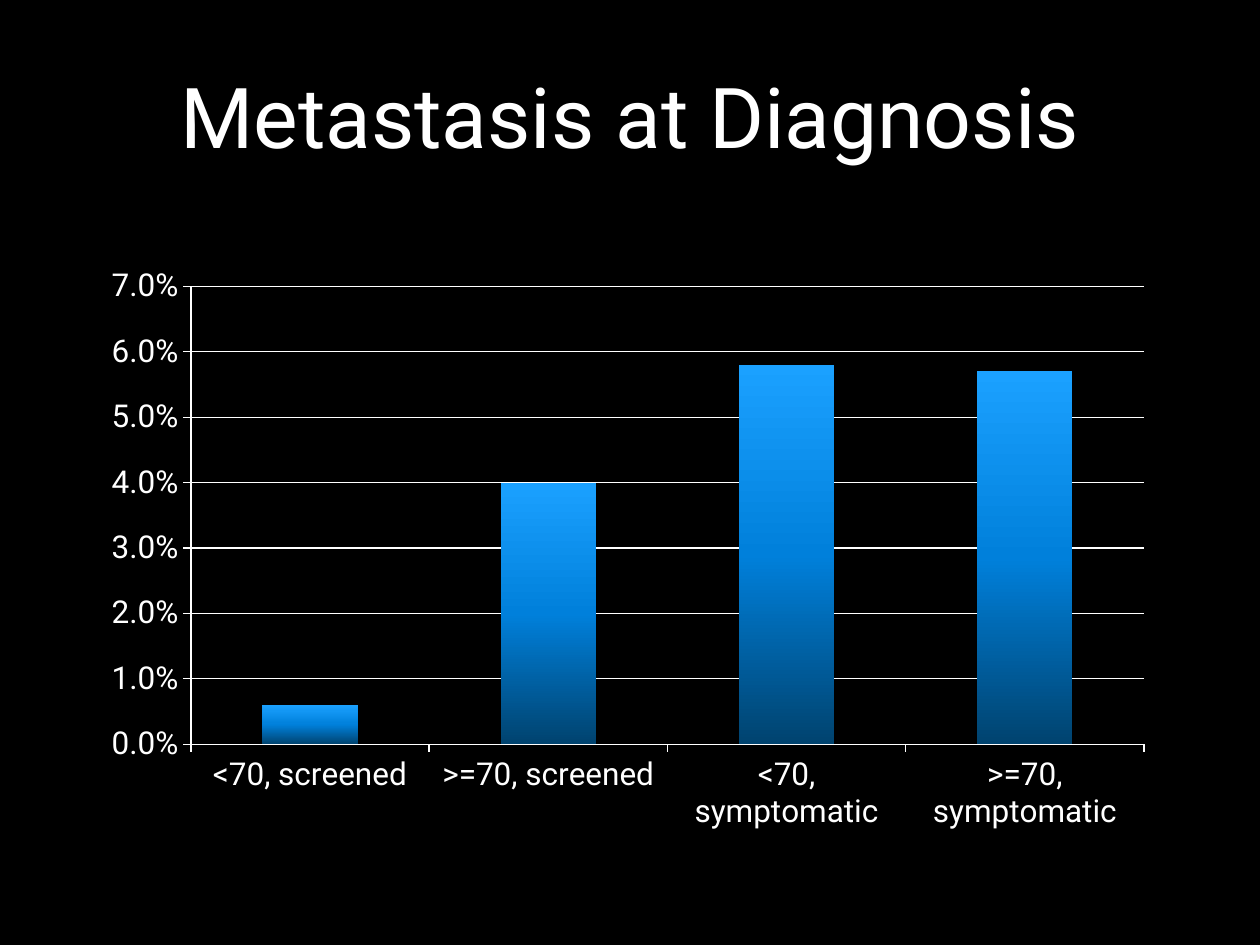
from copy import deepcopy
from typing import NamedTuple

from pptx import Presentation
from pptx.chart import data as cd
from pptx.dml.color import RGBColor
from pptx.enum import chart as ch, text
from pptx.oxml import parse_xml
from pptx.oxml.ns import nsdecls, qn
from pptx.util import Pt

FONT = "Roboto"
WHITE = "FFFFFF"


class Bar(NamedTuple):
    label: str
    share: float


class Stop(NamedTuple):
    place: float
    tint: str


BARS = [
    Bar("<70, screened", 0.006),
    Bar(">=70, screened", 0.04),
    Bar("<70, symptomatic", 0.058),
    Bar(">=70, symptomatic", 0.057),
]
# From the foot of each bar to its top
STOPS = [Stop(0, "00436F"), Stop(0.5, "0080DB"), Stop(1, "1BA1FF")]
PLOT = {"x": 0.09, "y": 0.05, "w": 0.89, "h": 0.78}


def color(code: str) -> RGBColor:
    return RGBColor.from_string(code)


def style(font, size: float) -> None:
    font.name = FONT
    font.size = Pt(size)
    font.color.rgb = color(WHITE)


def rule(line) -> None:
    line.color.rgb = color(WHITE)
    line.width = Pt(0.75)


def shade(fill, series) -> None:
    """Fill the bars with the three-stop gradient."""
    fill.gradient()
    fill.gradient_angle = 90
    stops = series._element.find(".//" + qn("a:gsLst"))
    stops.insert(1, deepcopy(stops[0]))
    for item, stop in zip(fill.gradient_stops, STOPS):
        item.position = stop.place
        item.color.rgb = color(stop.tint)


def place(chart) -> None:
    """Fix the inner plot area as fractions of the chart."""
    area = chart._chartSpace.find(".//" + qn("c:plotArea"))
    for old in area.findall(qn("c:layout")):
        area.remove(old)
    modes = "".join(f'<c:{key}Mode val="edge"/>' for key in "xy")
    sizes = "".join(f'<c:{key} val="{val}"/>' for key, val in PLOT.items())
    area.insert(0, parse_xml(
        f'<c:layout {nsdecls("c")}><c:manualLayout>'
        f'<c:layoutTarget val="inner"/>{modes}{sizes}'
        "</c:manualLayout></c:layout>"))


def add_title(slide) -> None:
    title = slide.shapes.title
    title.left, title.top = Pt(54), Pt(9.36)
    title.width, title.height = Pt(612), Pt(112.32)
    frame = title.text_frame
    frame.text = "Metastasis at Diagnosis"
    frame.vertical_anchor = text.MSO_ANCHOR.MIDDLE
    para = frame.paragraphs[0]
    para.alignment = text.PP_ALIGN.CENTER
    style(para.runs[0].font, 48)


def add_bars(slide) -> None:
    data = cd.CategoryChartData(number_format="0.0%")
    data.categories = [bar.label for bar in BARS]
    data.add_series("Series 1", [bar.share for bar in BARS])
    chart = slide.shapes.add_chart(
        ch.XL_CHART_TYPE.COLUMN_CLUSTERED,
        Pt(54), Pt(146.88), Pt(612), Pt(335.52), data).chart
    chart.has_legend = False
    chart.has_title = False
    style(chart.font, 18)
    place(chart)

    plot = chart.plots[0]
    plot.gap_width = 150
    plot.vary_by_categories = False
    series = plot.series[0]
    series.invert_if_negative = False
    shade(series.format.fill, series)

    for axis in (chart.category_axis, chart.value_axis):
        axis.major_tick_mark = ch.XL_TICK_MARK.OUTSIDE
        axis.minor_tick_mark = ch.XL_TICK_MARK.NONE
        rule(axis.format.line)
        style(axis.tick_labels.font, 18)
    scale = chart.value_axis
    scale.minimum_scale, scale.maximum_scale = 0, 0.07
    scale.major_unit = 0.01
    scale.has_major_gridlines = True
    rule(scale.major_gridlines.format.line)
    scale.tick_labels.number_format = "0.0%"
    scale.tick_labels.number_format_is_linked = False


def main() -> None:
    deck = Presentation()
    deck.slide_width, deck.slide_height = Pt(720), Pt(540)
    slide = deck.slides.add_slide(deck.slide_layouts[5])
    back = slide.background.fill
    back.solid()
    back.fore_color.rgb = color("000000")
    add_title(slide)
    add_bars(slide)
    deck.save("out.pptx")


if __name__ == "__main__":
    main()
